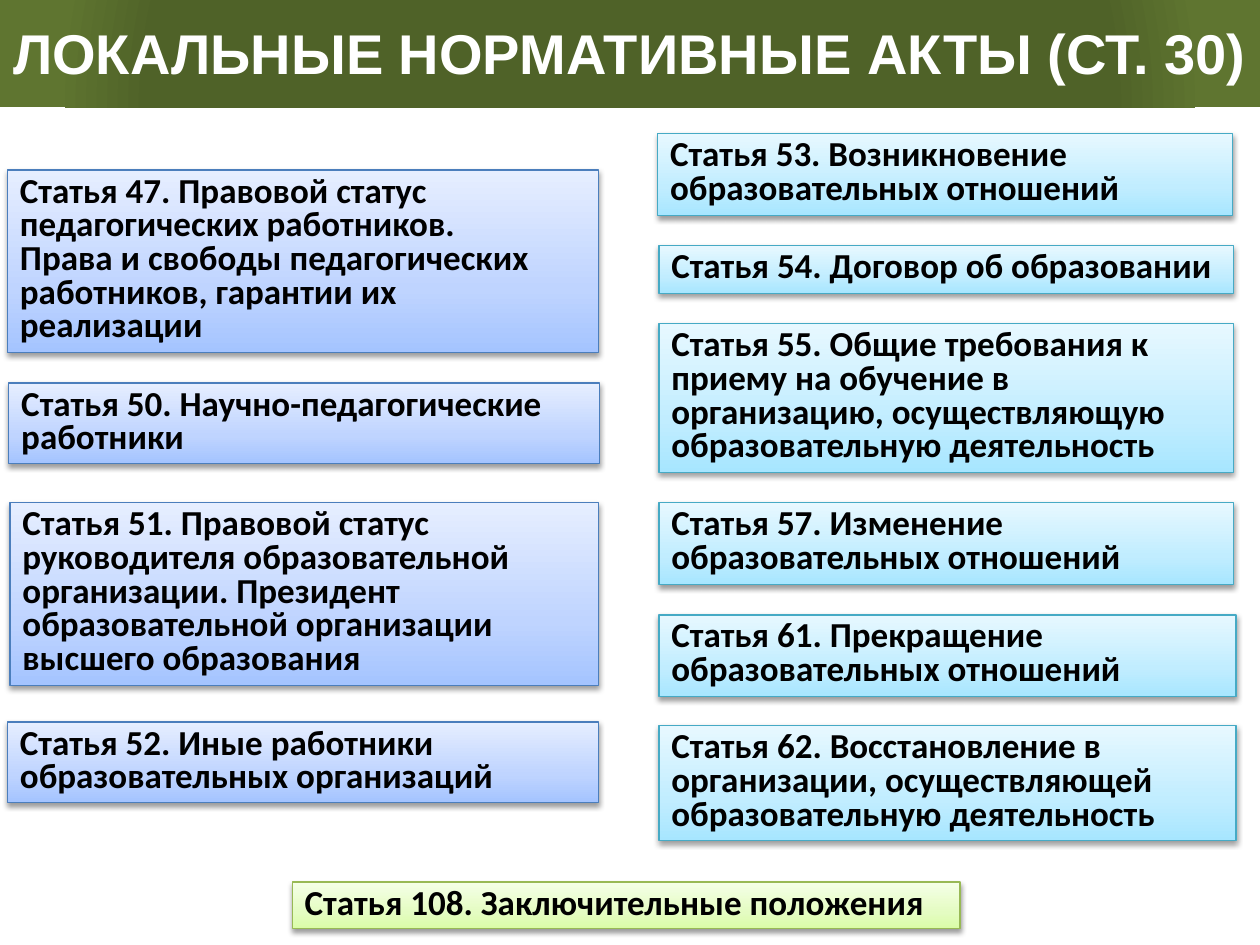
from dataclasses import dataclass

from lxml import etree
from pptx import Presentation
from pptx import util as u
from pptx.dml.color import RGBColor
from pptx.enum import shapes, text
from pptx.oxml import parse_xml
from pptx.oxml.ns import nsdecls, qn

COLORS = {
    "ink": "000000",
    "title": "FFFFFF",
    "band_dark": "4F6228",
    "band_light": "5F7530",
}
UPWARD = '<a:lin ang="16200000" scaled="1"/>'
CIRCLE = '<a:path path="circle"><a:fillToRect l="50000" t="130000" r="50000" b="-30000"/></a:path>'


@dataclass(frozen=True)
class Theme:
    line: str
    deep: str
    middle: str
    pale: str


@dataclass(frozen=True)
class Article:
    left: float
    top: float
    width: float
    height: float
    theme: Theme
    lines: tuple[str, ...]


BLUE = Theme("4B7EBC", "A4C4FF", "BFD4FF", "E6EEFF")
AQUA = Theme("46AAC5", "A7E6FF", "C1EDFF", "E7F8FF")
GREEN = Theme("98B955", "DAFDA7", "E4FCC2", "F5FFE7")

ARTICLES = [
    Article(0.06, 1.35, 4.69, 1.45, BLUE, (
        "Статья 47. Правовой статус педагогических работников.",
        "Права и свободы педагогических работников, гарантии их реализации")),
    Article(0.07, 3.04, 4.69, 0.64, BLUE, ("Статья 50. Научно-педагогические работники",)),
    Article(0.08, 3.99, 4.67, 1.45, BLUE, (
        "Статья 51. Правовой статус руководителя образовательной организации. "
        "Президент образовательной организации высшего образования",)),
    Article(0.06, 5.73, 4.69, 0.64, BLUE, (
        "Статья 52. Иные работники образовательных организаций",)),
    Article(5.22, 1.06, 4.56, 0.65, AQUA, (
        "Статья 53. Возникновение образовательных отношений",)),
    Article(5.23, 1.95, 4.56, 0.38, AQUA, ("Статья 54. Договор об образовании",)),
    Article(5.23, 2.57, 4.56, 1.18, AQUA, (
        "Статья 55. Общие требования к приему на обучение в организацию, "
        "осуществляющую образовательную деятельность",)),
    Article(5.23, 3.99, 4.56, 0.65, AQUA, ("Статья 57. Изменение образовательных отношений",)),
    Article(5.23, 4.88, 4.58, 0.65, AQUA, ("Статья 61. Прекращение образовательных отношений",)),
    Article(5.23, 5.76, 4.58, 0.91, AQUA, (
        "Статья 62. Восстановление в организации, осуществляющей образовательную деятельность",)),
    Article(2.32, 7, 5.3, 0.37, GREEN, ("Статья 108. Заключительные положения",)),
]


def place(shape, left: float, top: float, width: float, height: float) -> None:
    shape.left, shape.top = u.Inches(left), u.Inches(top)
    shape.width, shape.height = u.Inches(width), u.Inches(height)


def fill_gradient(shape, stops: list[tuple[int, str]], direction: str) -> None:
    marks = "".join(
        f'<a:gs pos="{position * 1000}"><a:srgbClr val="{color}"/></a:gs>'
        for position, color in stops
    )
    gradient = parse_xml(
        f'<a:gradFill {nsdecls("a")} rotWithShape="1"><a:gsLst>{marks}</a:gsLst>'
        f"{direction}</a:gradFill>"
    )
    shape.fill.background()
    properties = shape.element.spPr
    properties.replace(properties.find(qn("a:noFill")), gradient)


def add_shadow(shape) -> None:
    shape.shadow.inherit = False
    effects = shape.element.spPr.find(qn("a:effectLst"))
    shadow = etree.SubElement(effects, qn("a:outerShdw"), blurRad="40000", dist="20000",
                              dir="5400000", rotWithShape="0")
    color = etree.SubElement(shadow, qn("a:srgbClr"), val=COLORS["ink"])
    etree.SubElement(color, qn("a:alpha"), val="38000")


def add_span(para, words: str, font: str, size: int, color: str) -> None:
    span = para.add_run()
    span.text = words
    span.font.name = font
    span.font.size = u.Pt(size)
    span.font.bold = True
    span.font.color.rgb = RGBColor.from_string(color)


def draw_title(page) -> None:
    title = page.shapes.title
    place(title, 0, -0.03, 10, 0.88)
    fill_gradient(title, [(76, COLORS["band_dark"]), (91, COLORS["band_light"])], CIRCLE)
    frame = title.text_frame
    frame.auto_size = text.MSO_AUTO_SIZE.NONE
    frame.vertical_anchor = text.MSO_ANCHOR.MIDDLE
    para = frame.paragraphs[0]
    para.alignment = text.PP_ALIGN.CENTER
    add_span(para, "ЛОКАЛЬНЫЕ НОРМАТИВНЫЕ АКТЫ (СТ. 30)", "Arial", 32, COLORS["title"])


def draw_article(page, article: Article) -> None:
    box = page.shapes.add_shape(shapes.MSO_SHAPE.RECTANGLE, 0, 0, 0, 0)
    place(box, article.left, article.top, article.width, article.height)
    theme = article.theme
    fill_gradient(box, [(0, theme.deep), (35, theme.middle), (100, theme.pale)], UPWARD)
    box.line.color.rgb = RGBColor.from_string(theme.line)
    box.line.width = u.Pt(0.75)
    add_shadow(box)
    frame = box.text_frame
    frame.word_wrap = True
    frame.auto_size = text.MSO_AUTO_SIZE.SHAPE_TO_FIT_TEXT
    frame.vertical_anchor = text.MSO_ANCHOR.TOP
    for index, words in enumerate(article.lines):
        para = frame.add_paragraph() if index else frame.paragraphs[0]
        para.alignment = text.PP_ALIGN.LEFT
        para.line_spacing = 0.8
        add_span(para, words, "Calibri", 20, COLORS["ink"])


def main() -> None:
    deck = Presentation()
    deck.slide_width, deck.slide_height = u.Inches(10), u.Inches(7.5)
    page = deck.slides.add_slide(deck.slide_layouts[5])
    draw_title(page)
    for article in ARTICLES:
        draw_article(page, article)
    deck.save("out.pptx")


if __name__ == "__main__":
    main()
